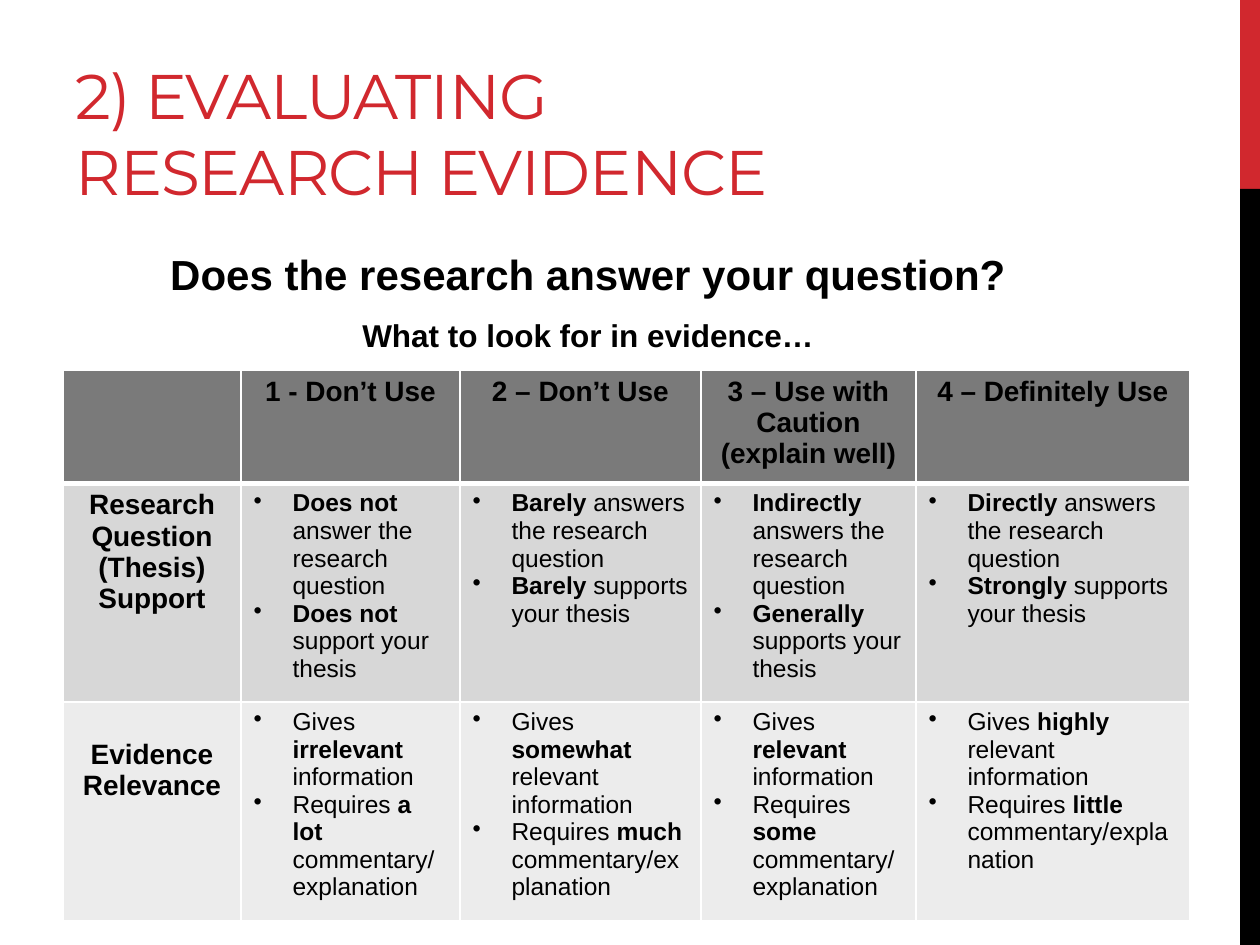
from lxml import etree
from pptx import Presentation
from pptx import util as u
from pptx.dml.color import RGBColor
from pptx.enum import shapes, text
from pptx.oxml import ns

SCALE = 914400 / 126
COLORS = {
    "red": "D1282E",
    "black": "000000",
    "white": "FFFFFF",
    "header": "7A7A7A",
    "support": "D7D7D7",
    "relevance": "ECECEC",
}
COLUMNS = [178, 219, 241, 215, 274]
ROWS = [
    ("header", 105, ["", "1 - Don’t Use", "2 – Don’t Use",
                     "3 – Use with Caution (explain well)", "4 – Definitely Use"]),
    ("support", 206, [
        "Research Question (Thesis) Support",
        ["**Does not **answer the research question", "**Does not **support your thesis"],
        ["**Barely **answers the research question", "**Barely **supports your thesis"],
        ["**Indirectly** answers the research question", "**Generally** supports your thesis"],
        ["**Directly** answers the research question", "**Strongly** supports your thesis"],
    ]),
    ("relevance", 205, [
        "Evidence\nRelevance",
        ["Gives **irrelevant **information", "Requires **a lot **commentary/explanation"],
        ["Gives **somewhat **relevant information", "Requires **much **commentary/explanation"],
        ["Gives **relevant** information", "Requires **some** commentary/explanation"],
        ["Gives **highly** relevant information", "Requires **little** commentary/explanation"],
    ]),
]


def px(length):
    """Turn pixels into EMU."""
    return u.Emu(round(length * SCALE))


def color(name):
    """Look up a named colour."""
    return RGBColor.from_string(COLORS[name])


def set_font(paragraph, size, bold=None, name="Arial", fill="black"):
    """Format all the text of a paragraph."""
    font = paragraph.font
    font.size, font.bold, font.name = u.Pt(size), bold, name
    font.color.rgb = color(fill)


def add_sidebar(slide, left, top, width, height):
    """Draw the red and black bar, split at a fifth of its height."""
    split = height // 5
    for name, offset, length in (("red", 0, split), ("black", split, height - split)):
        bar = slide.shapes.add_shape(shapes.MSO_SHAPE.RECTANGLE, px(left), px(top + offset),
                                     px(width), px(length))
        bar.shadow.inherit = False
        bar.fill.solid()
        bar.fill.fore_color.rgb = color(name)
        bar.line.fill.background()


def add_title(slide, left, top, width, height):
    """Place and format the title placeholder."""
    title = slide.shapes.title
    title.left, title.top, title.width, title.height = map(px, (left, top, width, height))
    frame = title.text_frame
    frame.text = "2) EVALUATING RESEARCH EVIDENCE"
    frame.auto_size = text.MSO_AUTO_SIZE.NONE
    frame.vertical_anchor = text.MSO_ANCHOR.BOTTOM
    frame.margin_bottom = px(2)
    paragraph = frame.paragraphs[0]
    paragraph.alignment = text.PP_ALIGN.LEFT
    set_font(paragraph, 36, False, "Montserrat", "red")
    paragraph.runs[0].font._element.set("spc", "-60")


def add_questions(slide, left, top, width, height):
    """Write the two centred lines above the table."""
    frame = slide.shapes.add_textbox(*map(px, (left, top, width, height))).text_frame
    frame.word_wrap = True
    frame.text = "Does the research answer your question?\nWhat to look for in evidence…"
    for paragraph, size, before in zip(frame.paragraphs, (24, 18), (2, 4)):
        paragraph.alignment = text.PP_ALIGN.CENTER
        paragraph.space_before, paragraph.space_after = u.Pt(before), u.Pt(6)
        set_font(paragraph, size, True)


def set_borders(cell, top, bottom):
    """Give a cell white borders, with top and bottom widths in points."""
    properties = cell._tc.get_or_add_tcPr()
    for index, (side, width) in enumerate((("L", 1), ("R", 1), ("T", top), ("B", bottom))):
        line = etree.Element(ns.qn(f"a:ln{side}"), w=str(u.Pt(width)))
        fill = etree.SubElement(line, ns.qn("a:solidFill"))
        etree.SubElement(fill, ns.qn("a:srgbClr"), val=COLORS["white"])
        properties.insert(index, line)


def write_label(cell, label):
    """Write a bold centred heading in a cell."""
    cell.text = label
    for paragraph in cell.text_frame.paragraphs:
        paragraph.alignment = text.PP_ALIGN.CENTER
        set_font(paragraph, 16, True)


def write_bullets(cell, items):
    """Write bulleted items, with bold parts between double asterisks."""
    cell.text = "\n".join("" for _ in items)
    for paragraph, item in zip(cell.text_frame.paragraphs, items):
        set_font(paragraph, 14)
        properties = paragraph._p.get_or_add_pPr()
        properties.set("marL", str(px(39)))
        properties.set("indent", str(px(-39)))
        bullet = etree.Element(ns.qn("a:buChar"), char="•")
        properties.insert(0, bullet)
        for index, part in enumerate(item.split("**")):
            if part:
                run = paragraph.add_run()
                run.text = part
                run.font.bold = index % 2 == 1


def add_rubric(slide, left, top):
    """Build the table that rates evidence from 1 to 4."""
    heights = [height for _, height, _ in ROWS]
    table = slide.shapes.add_table(len(ROWS), len(COLUMNS), px(left), px(top),
                                   px(sum(COLUMNS)), px(sum(heights))).table
    table.first_row = table.horz_banding = False
    for column, width in zip(table.columns, COLUMNS):
        column.width = px(width)
    for row_index, (fill, height, contents) in enumerate(ROWS):
        table.rows[row_index].height = px(height)
        for cell, content in zip(table.rows[row_index].cells, contents):
            cell.fill.solid()
            cell.fill.fore_color.rgb = color(fill)
            set_borders(cell, 3 if row_index == 1 else 1, 3 if row_index == 0 else 1)
            write = write_label if isinstance(content, str) else write_bullets
            write(cell, content)
    table.cell(2, 0).margin_top = px(37)


def main():
    """Build and save the slide."""
    presentation = Presentation()
    presentation.slide_width, presentation.slide_height = px(1260), px(945)
    slide = presentation.slides.add_slide(presentation.slide_layouts[5])
    add_sidebar(slide, 1240, 0, 20, 945)
    add_title(slide, 63, 21, 798, 189)
    add_questions(slide, 63, 242, 1050, 120)
    add_rubric(slide, 63, 370)
    presentation.save("out.pptx")


if __name__ == "__main__":
    main()
